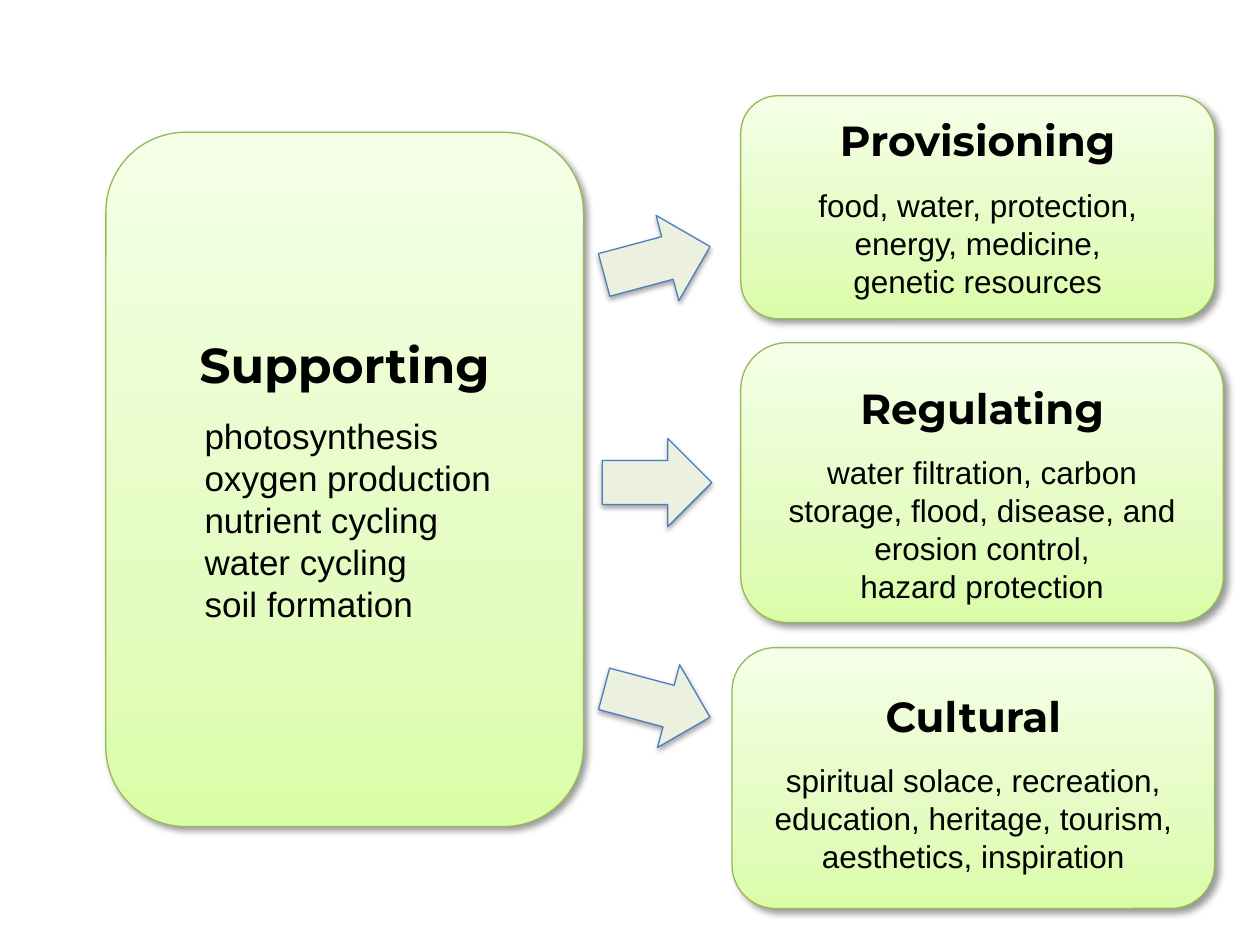
from dataclasses import dataclass

from lxml.etree import SubElement
from pptx import Presentation
from pptx.dml.color import RGBColor
from pptx.enum.shapes import MSO_SHAPE
from pptx.enum.text import MSO_ANCHOR, PP_ALIGN
from pptx.oxml.ns import qn
from pptx.util import Inches, Pt


@dataclass(frozen=True)
class Theme:
    heading_font: str = "Montserrat"
    body_font: str = "Arial"
    text: str = "000000"
    card_stops: tuple = ((0, "DAFDA7"), (35, "E4FCC2"), (100, "F5FFE7"))
    card_line: str = "98B955"
    arrow_fill: str = "EBF1DE"
    arrow_line: str = "4B7EBC"
    line_width: float = 0.75
    source_heading: int = 28
    source_body: int = 20
    service_heading: int = 24
    service_body: int = 18
    heading_gap: int = 12
    card_shadow: tuple = (40, 4, 3, 45)
    arrow_shadow: tuple = (35, 3.1, 1.8, 90)


THEME = Theme()

SUPPORTING = (
    "Supporting",
    ["photosynthesis", "oxygen production", "nutrient cycling", "water cycling", "soil formation"],
)
SERVICES = [
    ((5.88, 0.76, 3.76, 1.77), "Provisioning",
     ["food, water, protection, energy, medicine,", "genetic resources"], 0),
    ((5.88, 2.72, 3.83, 2.22), "Regulating",
     ["water filtration, carbon storage, flood, disease, and erosion control,",
      "hazard protection"], 0.17),
    ((5.81, 5.14, 3.83, 2.07), "Cultural",
     ["spiritual solace, recreation, education, heritage, tourism, aesthetics, inspiration"], 0.07),
]
ARROWS = [
    ((4.78, 1.72, 0.87, 0.7), -15),
    ((4.78, 3.48, 0.87, 0.7), 0),
    ((4.78, 5.24, 0.87, 0.68), 15),
]


def add_color(parent, color, **transforms):
    element = SubElement(parent, qn("a:srgbClr"), val=color)
    for name, percent in transforms.items():
        SubElement(element, qn(f"a:{name}"), val=str(percent * 1000))


def set_shadow(shape, alpha, blur, distance, angle):
    shape.shadow.inherit = False
    effects = shape._element.spPr.find(qn("a:effectLst"))
    outer = SubElement(
        effects, qn("a:outerShdw"), blurRad=str(Pt(blur)), dist=str(Pt(distance)),
        dir=str(angle * 60000), rotWithShape="0",
    )
    add_color(outer, THEME.text, alpha=alpha)


def set_gradient(shape, stops):
    shape.fill.gradient()
    shape.fill.gradient_angle = 90
    stop_list = shape._element.spPr.find(qn("a:gradFill")).find(qn("a:gsLst"))
    for old_stop in list(stop_list):
        stop_list.remove(old_stop)
    for position, color in stops:
        add_color(SubElement(stop_list, qn("a:gs"), pos=str(position * 1000)), color)


def add_outlined_shape(page, kind, box, line_color, shadow):
    shape = page.shapes.add_shape(kind, *map(Inches, box))
    shape.line.color.rgb = RGBColor.from_string(line_color)
    shape.line.width = Pt(THEME.line_width)
    set_shadow(shape, *shadow)
    return shape


def format_paragraph(para, text, font_name, size, bold, alignment):
    para.text = text
    para.alignment = alignment
    para.font.name = font_name
    para.font.size = Pt(size)
    para.font.bold = bold
    para.font.color.rgb = RGBColor.from_string(THEME.text)


def add_card(page, box, heading, lines, heading_size, body_size,
             alignment=PP_ALIGN.CENTER, indent=0, top_offset=0):
    card = add_outlined_shape(
        page, MSO_SHAPE.ROUNDED_RECTANGLE, box, THEME.card_line, THEME.card_shadow)
    set_gradient(card, THEME.card_stops)
    frame = card.text_frame
    frame.word_wrap = True
    frame.vertical_anchor = MSO_ANCHOR.MIDDLE
    frame.margin_top = Inches(0.05 + top_offset)
    title = frame.paragraphs[0]
    format_paragraph(title, heading, THEME.heading_font, heading_size, True, PP_ALIGN.CENTER)
    title.space_after = Pt(THEME.heading_gap)
    for line in lines:
        para = frame.add_paragraph()
        format_paragraph(para, line, THEME.body_font, body_size, False, alignment)
        if indent:
            para.level = 1
            para._p.get_or_add_pPr().set("marL", str(Inches(indent)))


def add_supporting(page, box):
    add_card(page, box, *SUPPORTING, THEME.source_heading, THEME.source_body,
             PP_ALIGN.LEFT, indent=0.5)


def add_services(page):
    for box, heading, lines, top_offset in SERVICES:
        add_card(page, box, heading, lines, THEME.service_heading, THEME.service_body,
                 top_offset=top_offset)


def add_arrows(page):
    for box, rotation in ARROWS:
        arrow = add_outlined_shape(
            page, MSO_SHAPE.RIGHT_ARROW, box, THEME.arrow_line, THEME.arrow_shadow)
        arrow.fill.solid()
        arrow.fill.fore_color.rgb = RGBColor.from_string(THEME.arrow_fill)
        arrow.rotation = rotation


def main():
    deck = Presentation()
    deck.slide_width, deck.slide_height = Inches(10), Inches(7.5)
    page = deck.slides.add_slide(deck.slide_layouts[6])
    add_supporting(page, (0.84, 1.05, 3.79, 5.51))
    add_services(page)
    add_arrows(page)
    deck.save("out.pptx")


if __name__ == "__main__":
    main()
